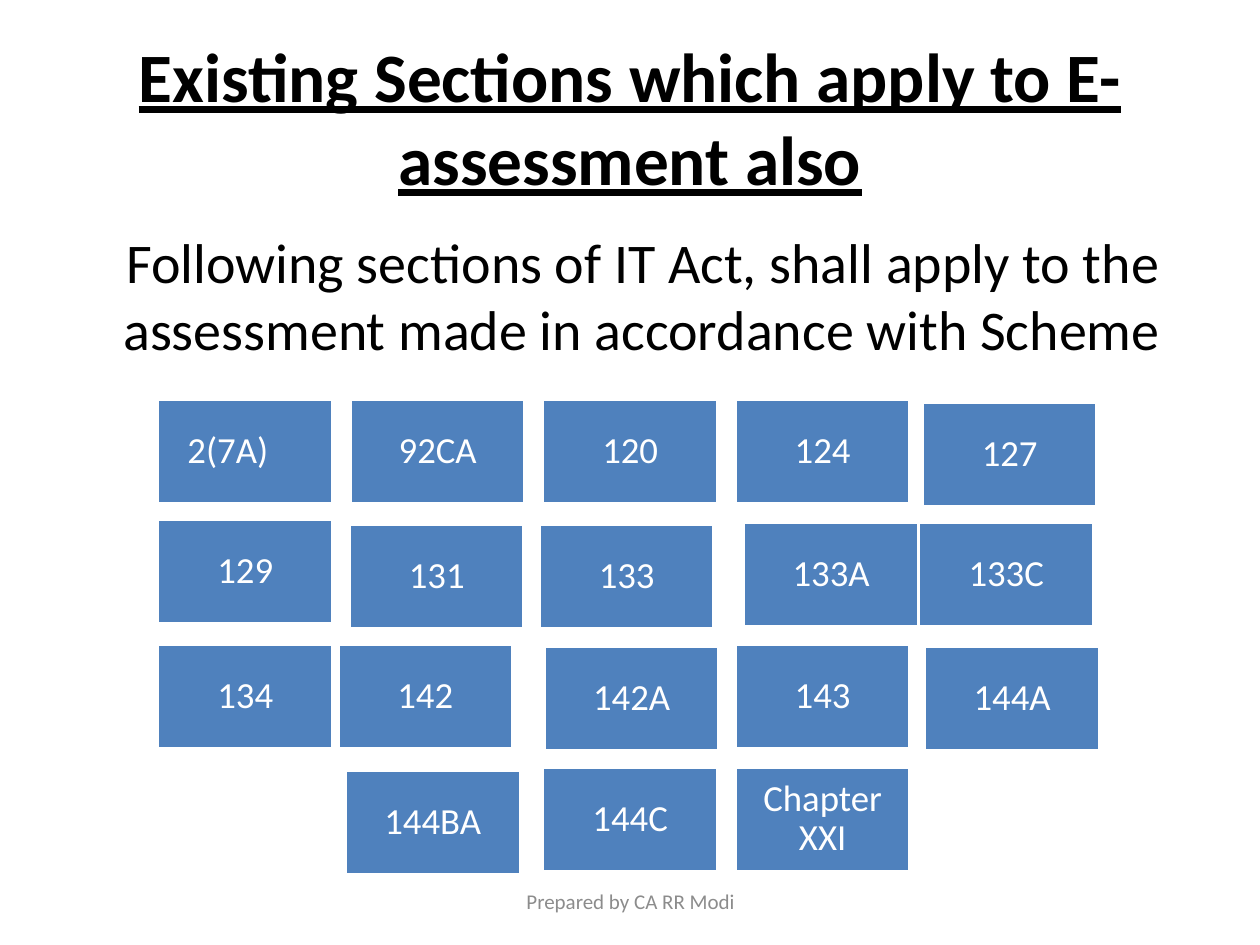
from dataclasses import dataclass

from lxml.etree import SubElement
from pptx import Presentation
from pptx.dml.color import RGBColor
from pptx.enum.shapes import MSO_SHAPE
from pptx.enum.text import MSO_ANCHOR, PP_ALIGN
from pptx.oxml.ns import qn
from pptx.util import Cm, Pt


@dataclass(frozen=True)
class Theme:
    """Colours, font and type sizes."""
    face: str = "Calibri"
    ink: str = "000000"
    tile: str = "4F81BD"
    pale: str = "FFFFFF"
    grey: str = "8C8C8C"
    head: float = 39.6
    body: float = 32
    label: float = 21
    foot: float = 12


LEFT, TOP = 3.18, 8.05
STEP_X, STEP_Y = 3.88, 2.47
WIDE, HIGH = 3.53, 2.11
ROWS = [
    (0, ["2(7A)", "92CA", "120", "124", "127"]),
    (0, ["129", "131", "133", "133A", "133C"]),
    (0, ["134", "142", "142A", "143", "144A"]),
    (1, ["144BA", "144C", "Chapter XXI"]),
]
SHIFTS = {
    "127": (-0.11, 0.05),
    "129": (0, -0.06),
    "131": (-0.02, 0.05),
    "133": (-0.07, 0.05),
    "133A": (0.17, 0),
    "133C": (-0.18, 0),
    "142": (-0.25, 0),
    "142A": (0.03, 0.04),
    "144A": (-0.06, 0.04),
    "144BA": (-0.1, 0.06),
}


class Page:
    """Holds the theme and the current slide."""

    def __init__(self, deck, theme):
        """Add a title and body slide."""
        self.theme = theme
        self.slide = deck.slides.add_slide(deck.slide_layouts[1])

    def place(self, shape, x, y, w, h):
        """Set a shape's box in centimetres."""
        shape.left, shape.top = Cm(x), Cm(y)
        shape.width, shape.height = Cm(w), Cm(h)

    def label(self, shape, text, size, tint, align=PP_ALIGN.CENTER):
        """Fill a shape with one styled paragraph."""
        frame = shape.text_frame
        frame.word_wrap = True
        para = frame.paragraphs[0]
        para.text, para.alignment = text, align
        font = para.font
        font.name, font.size = self.theme.face, Pt(size)
        font.color.rgb = RGBColor.from_string(tint)
        return para

    def title(self, text):
        """Set the underlined heading."""
        shape = self.slide.shapes.title
        self.place(shape, 1.27, 0.76, 22.86, 3.18)
        para = self.label(shape, text, self.theme.head, self.theme.ink)
        para.font.bold = para.font.underline = True

    def body(self, text):
        """Set the lead sentence without a bullet."""
        shape = self.slide.placeholders[1]
        self.place(shape, 1.27, 4.45, 22.86, 12.57)
        para = self.label(shape, text, self.theme.body, self.theme.ink,
                          PP_ALIGN.LEFT)
        props = para._p.get_or_add_pPr()
        props.set("marL", str(Cm(0.96)))
        props.set("indent", str(Cm(0.06)))
        props.insert_element_before(SubElement(props, qn("a:buNone")),
                                    "a:tabLst", "a:defRPr", "a:extLst")

    def tile(self, group, text, x, y):
        """Draw one section tile."""
        box = group.shapes.add_shape(MSO_SHAPE.RECTANGLE, Cm(x), Cm(y),
                                     Cm(WIDE), Cm(HIGH))
        box.shadow.inherit = False
        box.fill.solid()
        box.fill.fore_color.rgb = RGBColor.from_string(self.theme.tile)
        box.line.color.rgb = RGBColor.from_string(self.theme.pale)
        box.line.width = Pt(2)
        frame = box.text_frame
        frame.margin_left = frame.margin_right = Cm(0.23)
        frame.margin_top = frame.margin_bottom = Cm(0.23)
        frame.vertical_anchor = MSO_ANCHOR.MIDDLE
        para = self.label(box, text, self.theme.label, self.theme.pale)
        para.line_spacing = 0.9
        return box

    def grid(self):
        """Lay out all the section tiles in one group."""
        group = self.slide.shapes.add_group_shape()
        for row, (start, names) in enumerate(ROWS):
            for col, name in enumerate(names, start):
                dx, dy = SHIFTS.get(name, (0, 0))
                box = self.tile(group, name, LEFT + col * STEP_X + dx,
                                TOP + row * STEP_Y + dy)
                if row == col == 0:
                    box.text_frame.margin_left = Cm(0.6)
                    box.text_frame.paragraphs[0].alignment = PP_ALIGN.LEFT

    def footer(self, text):
        """Add the centred footer."""
        box = self.slide.shapes.add_textbox(Cm(8.69), Cm(17.65),
                                            Cm(8.05), Cm(1.02))
        box.text_frame.vertical_anchor = MSO_ANCHOR.MIDDLE
        self.label(box, text, self.theme.foot, self.theme.grey)


def main():
    """Build and save the deck."""
    deck = Presentation()
    deck.slide_width, deck.slide_height = Cm(25.4), Cm(19.05)
    page = Page(deck, Theme())
    page.title("Existing Sections which apply to E-assessment also")
    page.body("Following sections of IT Act, shall apply to the "
              "assessment made in accordance with Scheme")
    page.grid()
    page.footer("Prepared by CA RR Modi")
    deck.save("out.pptx")


if __name__ == "__main__":
    main()
